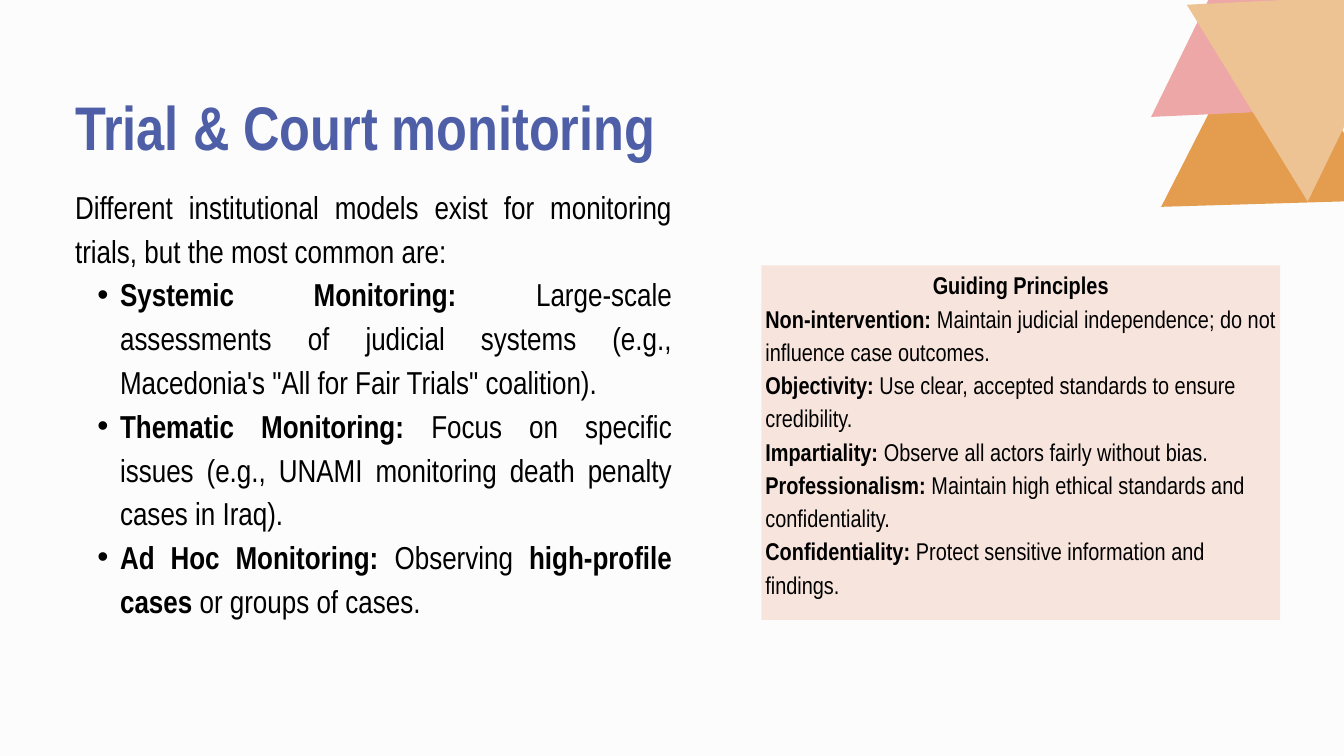
from dataclasses import dataclass

from lxml import etree
from pptx import Presentation
from pptx.dml.color import RGBColor
from pptx.enum.shapes import MSO_SHAPE
from pptx.enum.text import MSO_ANCHOR, MSO_AUTO_SIZE, PP_ALIGN
from pptx.oxml.ns import qn
from pptx.util import Cm, Pt

RECTANGLE = MSO_SHAPE.RECTANGLE
TOP = MSO_ANCHOR.TOP
NO_FIT = MSO_AUTO_SIZE.NONE
LEFT, CENTER, JUSTIFY = PP_ALIGN.LEFT, PP_ALIGN.CENTER, PP_ALIGN.JUSTIFY


@dataclass(frozen=True)
class Theme:
    font: str = "Arial Narrow"
    paper: str = "FCFCFC"
    ink: str = "000000"
    heading: str = "4E5FA7"
    panel: str = "F7E5DD"
    orange: str = "E49C4E"
    pink: str = "EDA7A7"
    sand: str = "EEC394"
    # Type size and line spacing, in points
    title: tuple = (66, 113.1)
    body: tuple = (34, 46.9)
    principles: tuple = (26, 35.6)


THEME = Theme()

# Boxes: left, top, width, height in centimetres
TITLE_BOX = (2.84, 2.18, 23.19, 3.94)
MODELS_BOX = (2.84, 6.88, 22.56, 16.56)
PANEL_BOX = (28.78, 10.03, 19.61, 13.41)
CORNER_BOX = (43.5, 0, 7.3, 7.82)

# A line is a list of (text, bold) spans
INTRO = [("Different institutional models exist for monitoring trials, "
          "but the most common are:", False)]
MODELS = [
    [("Systemic Monitoring:", True),
     (" Large-scale assessments of judicial systems (e.g., Macedonia's "
      "\"All for Fair Trials\" coalition).", False)],
    [("Thematic Monitoring:", True),
     (" Focus on specific issues (e.g., UNAMI monitoring death penalty "
      "cases in Iraq).", False)],
    [("Ad Hoc Monitoring:", True), (" Observing ", False),
     ("high-profile cases", True), (" or groups of cases.", False)],
]
PRINCIPLES = {
    "Non-intervention:": "Maintain judicial independence; do not influence case outcomes.",
    "Objectivity:": "Use clear, accepted standards to ensure credibility.",
    "Impartiality:": "Observe all actors fairly without bias.",
    "Professionalism:": "Maintain high ethical standards and confidentiality.",
    "Confidentiality:": "Protect sensitive information and findings.",
}
# Corner triangles, back to front, as points relative to the corner box
TRIANGLES = [
    (THEME.orange, [(4.35, 0.05), (8.8, 7.57), (0.39, 7.82)]),
    (THEME.pink, [(3.85, -3.43), (8.42, 4.04), (0.01, 4.42)]),
    (THEME.sand, [(5.93, 7.62), (1.36, 0.18), (9.74, -0.23)]),
]


def set_values(target, values):
    for name, value in values.items():
        setattr(target, name, value)


def place(shape, box):
    names = ("left", "top", "width", "height")
    set_values(shape, dict(zip(names, map(Cm, box))))


def paint(shape, color):
    shape.fill.solid()
    shape.fill.fore_color.rgb = RGBColor.from_string(color)
    shape.line.fill.background()
    shape.shadow.inherit = False


def prepare_frame(frame, side=0, top=0):
    set_values(frame, {
        "word_wrap": True, "auto_size": NO_FIT, "vertical_anchor": TOP,
        "margin_left": Cm(side), "margin_right": Cm(side),
        "margin_top": Cm(top), "margin_bottom": Cm(top),
    })


def write_line(para, spans, style, color, align):
    size, spacing = style
    set_values(para, {"alignment": align, "line_spacing": Pt(spacing),
                      "space_before": Pt(0), "space_after": Pt(0)})
    for text, bold in spans:
        span = para.add_run()
        span.text = text
        set_values(span.font, {"name": THEME.font, "size": Pt(size), "bold": bold})
        span.font.color.rgb = RGBColor.from_string(color)


def add_bullet(para):
    properties = para._p.get_or_add_pPr()
    properties.set("marL", str(Cm(1.7)))
    properties.set("indent", str(-Cm(0.86)))
    etree.SubElement(properties, qn("a:buFont")).set("typeface", "Arial")
    etree.SubElement(properties, qn("a:buChar")).set("char", "•")


def fill_title(page, box):
    title = page.shapes.title
    place(title, box)
    prepare_frame(title.text_frame)
    write_line(title.text_frame.paragraphs[0], [("Trial & Court monitoring", True)],
               THEME.title, THEME.heading, LEFT)


def add_models(page, box):
    frame = page.shapes.add_textbox(*map(Cm, box)).text_frame
    prepare_frame(frame)
    write_line(frame.paragraphs[0], INTRO, THEME.body, THEME.ink, JUSTIFY)
    for spans in MODELS:
        para = frame.add_paragraph()
        write_line(para, spans, THEME.body, THEME.ink, JUSTIFY)
        add_bullet(para)


def add_principles(page, box):
    panel = page.shapes.add_shape(RECTANGLE, *map(Cm, box))
    paint(panel, THEME.panel)
    frame = panel.text_frame
    prepare_frame(frame, side=0.15, top=0.05)
    write_line(frame.paragraphs[0], [("Guiding Principles", True)],
               THEME.principles, THEME.ink, CENTER)
    for name, rule in PRINCIPLES.items():
        write_line(frame.add_paragraph(), [(name, True), (f" {rule}", False)],
                   THEME.principles, THEME.ink, LEFT)


def add_corner(page, box):
    left, top = box[:2]
    for color, points in TRIANGLES:
        corners = [(Cm(left + x), Cm(top + y)) for x, y in points]
        outline = page.shapes.build_freeform(*corners[0])
        outline.add_line_segments(corners[1:], close=True)
        paint(outline.convert_to_shape(), color)


def main():
    deck = Presentation()
    set_values(deck, {"slide_width": Cm(50.8), "slide_height": Cm(28.58)})
    page = deck.slides.add_slide(deck.slide_layouts.get_by_name("Title Only"))
    page.background.fill.solid()
    page.background.fill.fore_color.rgb = RGBColor.from_string(THEME.paper)

    fill_title(page, TITLE_BOX)
    add_models(page, MODELS_BOX)
    add_principles(page, PANEL_BOX)
    add_corner(page, CORNER_BOX)
    deck.save("out.pptx")


if __name__ == "__main__":
    main()
